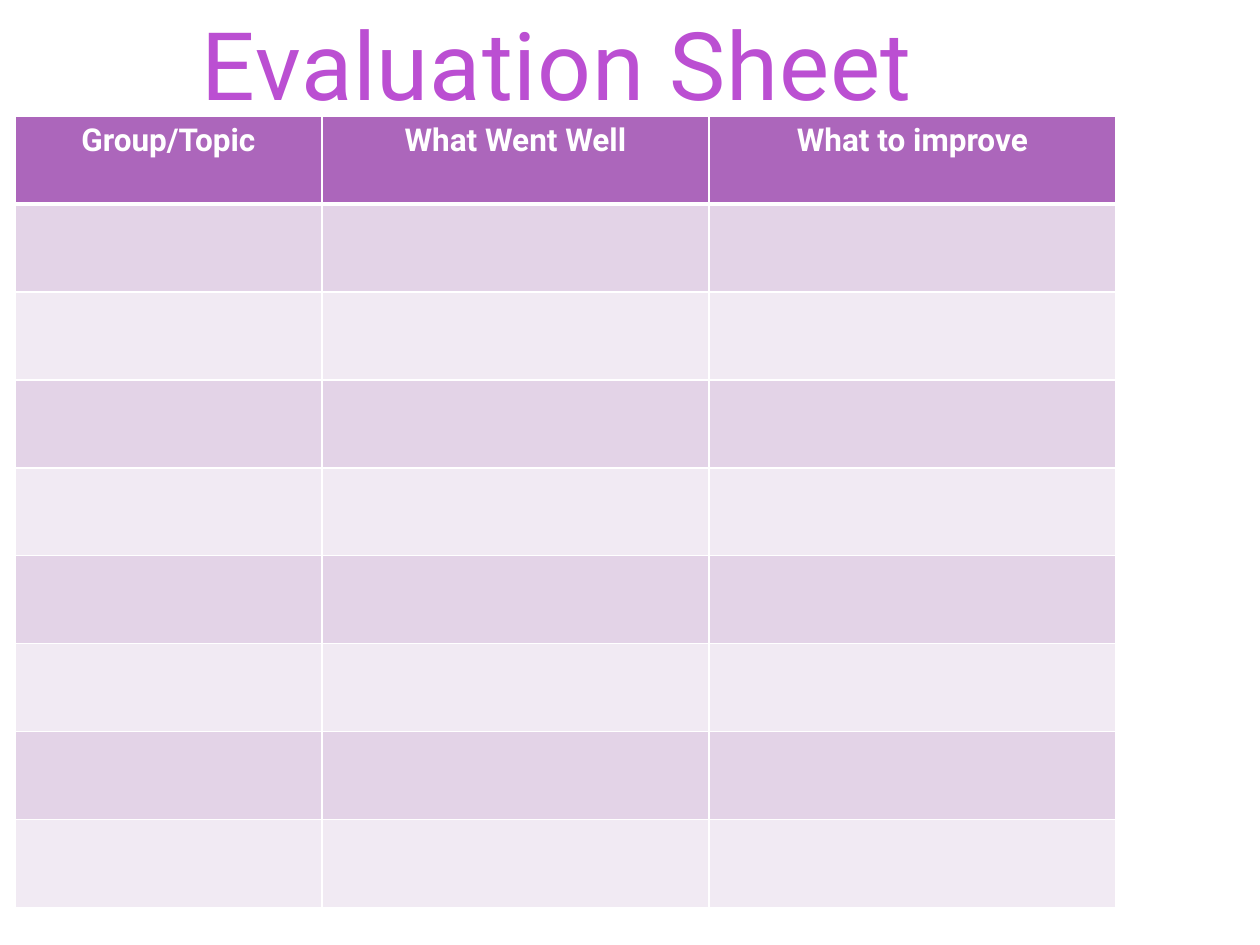
"""Build an evaluation sheet slide with a title and a blank feedback table."""
from dataclasses import dataclass

from lxml import etree
from pptx import Presentation, util as u
from pptx.dml.color import RGBColor
from pptx.enum import text
from pptx.oxml.ns import qn

EMU_PER_PX = 914400 / 126


@dataclass(frozen=True)
class Theme:
    font: str = "Roboto"
    title_size: int = 54
    header_size: int = 18
    title_stops: tuple = ((0.25, "BB4FD2"), (1.0, "863598"))
    header_fill: str = "AC66BB"
    band_fills: tuple = ("E3D3E7", "F1EAF3")
    white: str = "FFFFFF"
    thin_rule: int = 1
    thick_rule: int = 3


@dataclass(frozen=True)
class Box:
    left: int
    top: int
    width: int
    height: int


@dataclass(frozen=True)
class Column:
    heading: str
    width: int


THEME = Theme()
TITLE_BOX = Box(180, 0, 755, 127)
TABLE_LEFT, TABLE_TOP = 15, 116
ROW_COUNT, ROW_HEIGHT = 9, 88
COLUMNS = (
    Column("Group/Topic", 307),
    Column("What Went Well", 387),
    Column("What to improve", 407),
)


def px(length: int) -> u.Emu:
    return u.Emu(round(length * EMU_PER_PX))


def place(box: Box) -> tuple:
    return px(box.left), px(box.top), px(box.width), px(box.height)


def add_title(slide, title: str, box: Box) -> None:
    text_frame = slide.shapes.add_textbox(*place(box)).text_frame
    text_frame.word_wrap = False
    text_frame.auto_size = text.MSO_AUTO_SIZE.SHAPE_TO_FIT_TEXT
    text_frame.text = title
    paragraph = text_frame.paragraphs[0]
    paragraph.alignment = text.PP_ALIGN.CENTER
    run = paragraph.runs[0]
    run.font.name = THEME.font
    run.font.size = u.Pt(THEME.title_size)
    run.font.fill.gradient()
    run.font.fill.gradient_angle = 270
    for stop, (position, color) in zip(run.font.fill.gradient_stops, THEME.title_stops):
        stop.position = position
        stop.color.rgb = RGBColor.from_string(color)
    run.font._element.set("spc", "50")


def style_cell(cell, fill: str, top_rule: int, bottom_rule: int) -> None:
    properties = cell._tc.get_or_add_tcPr()
    rules = {"lnL": THEME.thin_rule, "lnR": THEME.thin_rule, "lnT": top_rule, "lnB": bottom_rule}
    for side, points in rules.items():
        line = etree.SubElement(properties, qn(f"a:{side}"), w=str(u.Pt(points)))
        solid = etree.SubElement(line, qn("a:solidFill"))
        etree.SubElement(solid, qn("a:srgbClr"), val=THEME.white)
    cell.fill.solid()
    cell.fill.fore_color.rgb = RGBColor.from_string(fill)


def write_heading(cell, heading: str) -> None:
    cell.text_frame.text = heading
    paragraph = cell.text_frame.paragraphs[0]
    paragraph.alignment = text.PP_ALIGN.CENTER
    font = paragraph.runs[0].font
    font.name = THEME.font
    font.size = u.Pt(THEME.header_size)
    font.bold = True
    font.color.rgb = RGBColor.from_string(THEME.white)


def add_feedback_table(slide, columns: tuple) -> None:
    width = sum(column.width for column in columns)
    box = Box(TABLE_LEFT, TABLE_TOP, width, ROW_COUNT * ROW_HEIGHT)
    table = slide.shapes.add_table(ROW_COUNT, len(columns), *place(box)).table
    for row in table.rows:
        row.height = px(ROW_HEIGHT)
    for column_index, column in enumerate(columns):
        table.columns[column_index].width = px(column.width)
        write_heading(table.cell(0, column_index), column.heading)
        for row_index in range(ROW_COUNT):
            fill = THEME.band_fills[(row_index - 1) % 2] if row_index else THEME.header_fill
            top_rule = THEME.thick_rule if row_index == 1 else THEME.thin_rule
            bottom_rule = THEME.thick_rule if row_index == 0 else THEME.thin_rule
            style_cell(table.cell(row_index, column_index), fill, top_rule, bottom_rule)


def main() -> None:
    presentation = Presentation()
    presentation.slide_width, presentation.slide_height = px(1260), px(945)
    slide = presentation.slides.add_slide(presentation.slide_layouts[6])
    add_feedback_table(slide, COLUMNS)
    add_title(slide, "Evaluation Sheet", TITLE_BOX)
    presentation.save("out.pptx")


if __name__ == "__main__":
    main()
